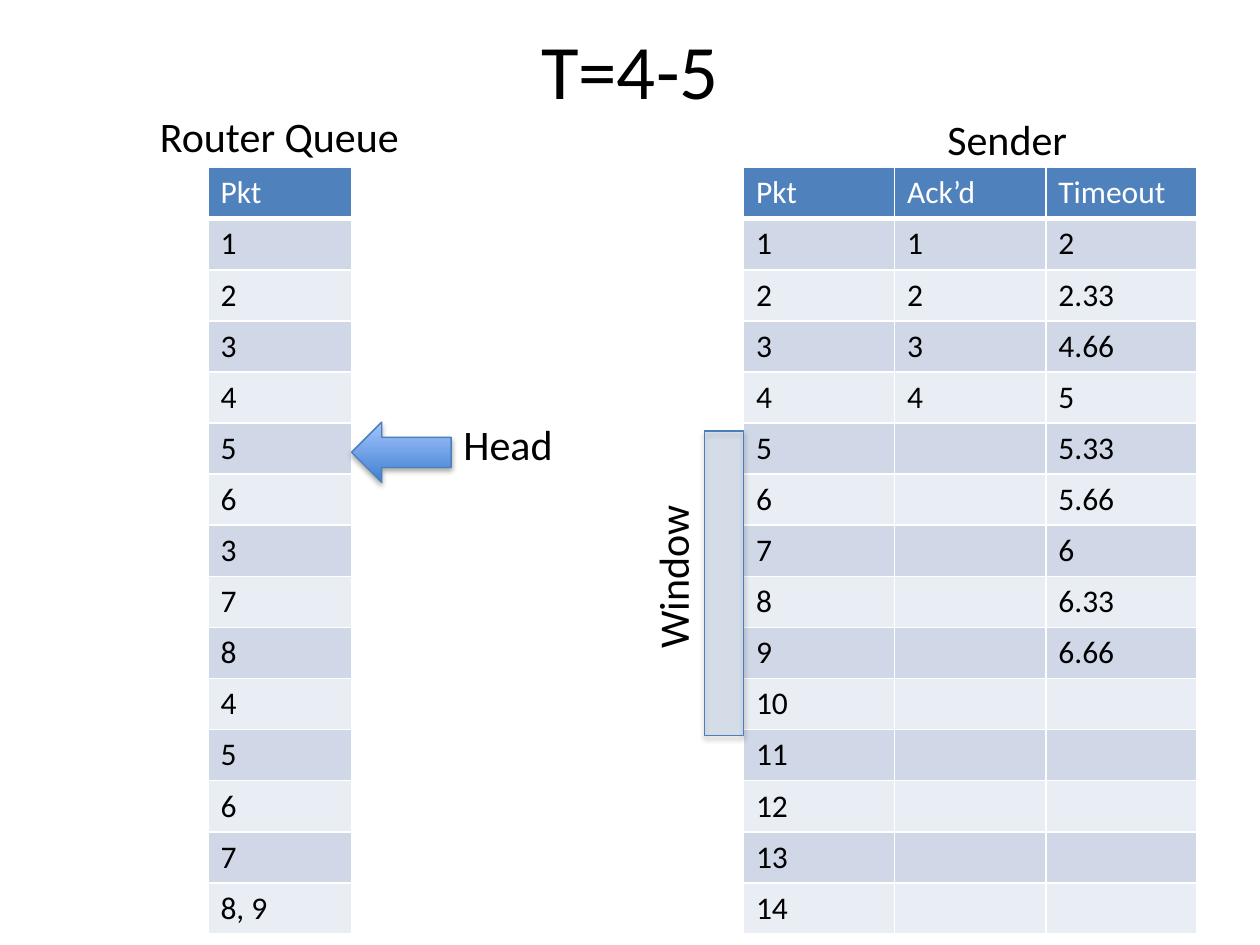
import pptx
import pptx.util
import pptx.dml.color
import pptx.enum.shapes
import pptx.enum.text
import pptx.oxml
import pptx.oxml.ns

Pt = pptx.util.Pt
Rgb = pptx.dml.color.RGBColor.from_string
Kind = pptx.enum.shapes.MSO_SHAPE
Fit = pptx.enum.text.MSO_AUTO_SIZE
Side = pptx.enum.text.PP_ALIGN
Hold = pptx.enum.text.MSO_ANCHOR
NS = pptx.oxml.ns.nsdecls("a")

theme = dict(
    font="Calibri", ink="000000", pale="FFFFFF", head="4F81BD",
    bands=("D0D8E8", "E9EDF4"), edge="4B7EBC", glow=("3F80CE", "A4C4FF"),
    title=44, label=24, cell=18,
)

deck = pptx.Presentation()
deck.slide_width = pptx.util.Inches(10)
deck.slide_height = pptx.util.Inches(7.5)
unit = deck.slide_width // 100
slide = deck.slides.add_slide(deck.slide_layouts[6])


def span(*cells):
    return [round(n * unit) for n in cells]


def write(frame, text, size=theme["label"], color=theme["ink"], align=Side.LEFT,
          wrap=False, fit=Fit.SHAPE_TO_FIT_TEXT, anchor=Hold.TOP):
    frame.word_wrap = wrap
    frame.auto_size = fit
    frame.vertical_anchor = anchor
    para = frame.paragraphs[0]
    para.alignment = align
    run = para.add_run()
    run.text = text
    run.font.name = theme["font"]
    run.font.size = Pt(size)
    run.font.color.rgb = Rgb(color)


title = slide.shapes.add_textbox(*span(5, -0.8, 90, 12.5))
write(title.text_frame, "T=4-5", size=theme["title"], align=Side.CENTER,
      wrap=True, fit=Fit.NONE, anchor=Hold.MIDDLE)

queue = [[n] for n in "Pkt,1,2,3,4,5,6,3,7,8,4,5,6,7".split(",")] + [["8, 9"]]
acks = ["1", "2", "3", "4"] + [""] * 10
times = "2 2.33 4.66 5 5.33 5.66 6 6.33 6.66".split() + [""] * 5
sender = [["Pkt", "Ack’d", "Timeout"]]
sender += [[str(n), ack, time] for n, (ack, time) in enumerate(zip(acks, times), 1)]

step = 4.055
for left, wide, rows in ((16.5, 11.4, queue), (59, 12, sender)):
    cols = len(rows[0])
    place = span(left, 13.3, wide * cols, step * len(rows))
    table = slide.shapes.add_table(len(rows), cols, *place).table
    for col in table.columns:
        col.width = round(wide * unit)
    for r, row in enumerate(rows):
        table.rows[r].height = round(step * unit)
        for c, text in enumerate(row):
            cell = table.cell(r, c)
            props = cell._tc.get_or_add_tcPr()
            for edge in "LRTB":
                thick = 3 if r == 0 and edge == "B" else 1
                props.append(pptx.oxml.parse_xml(
                    f'<a:ln{edge} {NS} w="{Pt(thick)}"><a:solidFill>'
                    f'<a:srgbClr val="{theme["pale"]}"/></a:solidFill></a:ln{edge}>'))
            cell.fill.solid()
            cell.fill.fore_color.rgb = Rgb(theme["bands"][(r - 1) % 2] if r else theme["head"])
            if text:
                write(cell.text_frame, text, size=theme["cell"], wrap=None, fit=None,
                      anchor=None, color=theme["ink"] if r else theme["pale"])

frame = slide.shapes.add_group_shape().shapes
point = slide.shapes.add_group_shape().shapes
bar = frame.add_shape(Kind.RECTANGLE, *span(55.9, 34.2, 3.1, 24.2))
bar.fill.solid()
bar.fill.fore_color.rgb = Rgb(theme["head"])
tint = bar._element.spPr.find(".//" + pptx.oxml.ns.qn("a:srgbClr"))
tint.append(pptx.oxml.parse_xml(f'<a:alpha {NS} val="17000"/>'))

arrow = point.add_shape(Kind.LEFT_ARROW, *span(27.9, 33.5, 7.9, 4.8))
arrow.fill.gradient()
arrow.fill.gradient_angle = 90
for stop, tone in zip(arrow.fill.gradient_stops, theme["glow"]):
    stop.color.rgb = Rgb(tone)

for shape in (bar, arrow):
    shape.line.color.rgb = Rgb(theme["edge"])
    shape.line.width = Pt(0.75)
    shape.shadow.inherit = False
    shade = shape._element.spPr.find(pptx.oxml.ns.qn("a:effectLst"))
    shade.append(pptx.oxml.parse_xml(
        f'<a:outerShdw {NS} blurRad="{Pt(3.1)}" dist="{Pt(1.8)}" dir="5400000" rotWithShape="0">'
        f'<a:srgbClr val="{theme["ink"]}"><a:alpha val="35000"/></a:srgbClr></a:outerShdw>'))

for home, text, place, turn in (
    (slide.shapes, "Router Queue", (11.7, 8.3, 21.2, 5), 0),
    (slide.shapes, "Sender", (74.2, 8.5, 11.6, 5), 0),
    (frame, "Window", (46.6, 43.2, 13.5, 5), 270),
    (point, "Head", (35.8, 32.7, 9.2, 5), 0),
):
    label = home.add_textbox(*span(*place))
    label.rotation = turn
    write(label.text_frame, text)

deck.save("out.pptx")
